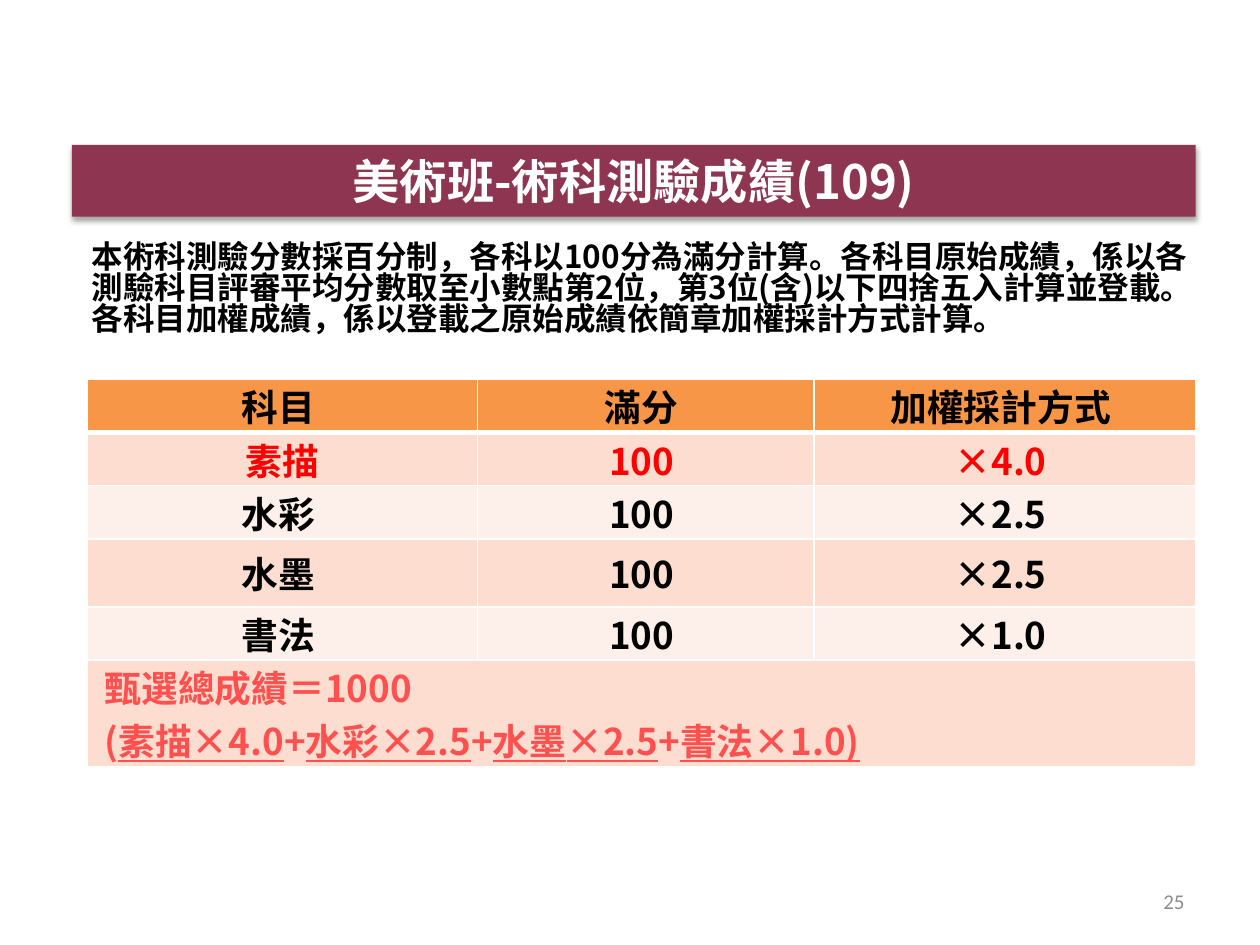
from lxml import etree
from pptx import Presentation
from pptx.dml.color import RGBColor
from pptx.enum import shapes, text
from pptx.oxml import ns
from pptx.util import Inches, Pt

CJK = "Noto Sans CJK SC"
SUBJECTS = [("素描", "×4.0 "), ("水彩 ", "×2.5 "), ("水墨 ", "×2.5 "), ("書法 ", "×1.0 ")]
COLUMN_WIDTHS = [3.1, 2.67, 3.03]
ROW_HEIGHTS = [0.35, 0.41, 0.41, 0.54, 0.41, 0.7]
BANDS = ["FCDDCF", "FDEFE9"]


def color(value):
    return RGBColor.from_string(value)


def add_element(parent, tag, **attributes):
    element = etree.SubElement(parent, ns.qn(tag))
    for name, value in attributes.items():
        element.set(name, str(value))
    return element


def add_run(paragraph, words, size, fill, name=CJK, bold=True, underline=None):
    run = paragraph.add_run()
    run.text = words
    font = run.font
    font.size, font.bold, font.underline, font.name = Pt(size), bold, underline, name
    font.color.rgb = color(fill)
    add_element(run._r.get_or_add_rPr(), "a:ea", typeface=name)


def add_banner(slide, left, top, width, height):
    banner = slide.shapes.add_shape(
        shapes.MSO_SHAPE.RECTANGLE, Inches(left), Inches(top), Inches(width), Inches(height))
    banner.fill.solid()
    banner.fill.fore_color.rgb = color("8E3651")
    banner.line.fill.background()
    banner.shadow.inherit = False
    effects = banner._element.spPr.find(ns.qn("a:effectLst"))
    shadow = add_element(effects, "a:outerShdw", blurRad=Pt(3.1), dist=Pt(1.8),
                         dir=5400000, rotWithShape=0)
    add_element(add_element(shadow, "a:srgbClr", val="000000"), "a:alpha", val=35000)
    banner.text_frame.vertical_anchor = text.MSO_ANCHOR.MIDDLE
    paragraph = banner.text_frame.paragraphs[0]
    paragraph.alignment = text.PP_ALIGN.CENTER
    add_run(paragraph, "美術班-術科測驗成績(109)", 27, "FFFFFF")


def add_text_box(slide, left, top, width, height):
    box = slide.shapes.add_textbox(Inches(left), Inches(top), Inches(width), Inches(height))
    box.text_frame.word_wrap = True
    return box.text_frame


def add_explanation(slide, left, top, width, height):
    paragraph = add_text_box(slide, left, top, width, height).paragraphs[0]
    paragraph.line_spacing = 0.83
    add_run(paragraph, "本術科測驗分數採百分制，各科以100分為滿分計算。各科目原始成績，係以"
            "各測驗科目評審平均分數取至小數點第2位，第3位(含)以下四捨五入計算並"
            "登載。各科目加權成績，係以登載之原始成績依簡章加權採計方式計算。", 18, "000000")


def add_page_number(slide, left, top, width, height):
    frame = add_text_box(slide, left, top, width, height)
    frame.vertical_anchor = text.MSO_ANCHOR.MIDDLE
    paragraph = frame.paragraphs[0]
    paragraph.alignment = text.PP_ALIGN.RIGHT
    add_run(paragraph, "25", 12, "8C8C8C", "Calibri", False)


def style_cell(cell, fill, top_width, bottom_width):
    cell.margin_left = cell.margin_right = Inches(0.06)
    cell.margin_top = cell.margin_bottom = 0
    cell.vertical_anchor = text.MSO_ANCHOR.MIDDLE
    properties = cell._tc.get_or_add_tcPr()
    for side, width in zip("LRTB", [1, 1, top_width, bottom_width]):
        border = add_element(properties, f"a:ln{side}", w=Pt(width))
        add_element(add_element(border, "a:solidFill"), "a:srgbClr", val="FFFFFF")
    cell.fill.solid()
    cell.fill.fore_color.rgb = color(fill)


def add_total(cell):
    first = cell.text_frame.paragraphs[0]
    second = cell.text_frame.add_paragraph()
    for paragraph in (first, second):
        paragraph._p.get_or_add_pPr().set("marL", str(Inches(0.08)))
    add_run(first, "甄選總成績＝1000", 21, "FF5050")
    parts = ["(", "素描×4.0", "+", "水彩×2.5", "+", "水墨×2.5", "+", "書法×1.0)"]
    for index, part in enumerate(parts):
        add_run(second, part, 21, "FF5050", underline=index % 2 == 1)


def add_score_table(slide, left, top, width, height):
    table = slide.shapes.add_table(
        len(ROW_HEIGHTS), len(COLUMN_WIDTHS),
        Inches(left), Inches(top), Inches(width), Inches(height)).table
    table.horz_banding = False
    for column, column_width in zip(table.columns, COLUMN_WIDTHS):
        column.width = Inches(column_width)
    for index, (row, row_height) in enumerate(zip(table.rows, ROW_HEIGHTS)):
        row.height = Inches(row_height)
        fill = BANDS[(index - 1) % 2] if index else "F79646"
        for cell in row.cells:
            style_cell(cell, fill, 3 if index == 1 else 1, 3 if index == 0 else 1)
    contents = [("科目 ", "滿分 ", "加權採計方式 ")]
    contents += [(subject, "100 ", weight) for subject, weight in SUBJECTS]
    for row_index, values in enumerate(contents):
        for column_index, value in enumerate(values):
            paragraph = table.cell(row_index, column_index).text_frame.paragraphs[0]
            paragraph.alignment = text.PP_ALIGN.CENTER
            add_run(paragraph, value, 21, "FF0000" if row_index == 1 else "000000")
    total = table.cell(5, 0)
    total.merge(table.cell(5, 2))
    add_total(total)


def main():
    presentation = Presentation()
    presentation.slide_width, presentation.slide_height = Inches(10), Inches(7.5)
    slide = presentation.slides.add_slide(presentation.slide_layouts[6])
    add_score_table(slide, 0.69, 3.01, 8.8, 2.82)
    add_banner(slide, 0.57, 1.15, 8.92, 0.57)
    add_page_number(slide, 7.17, 6.95, 2.33, 0.4)
    add_explanation(slide, 0.63, 1.88, 8.92, 1.01)
    presentation.save("out.pptx")


if __name__ == "__main__":
    main()
